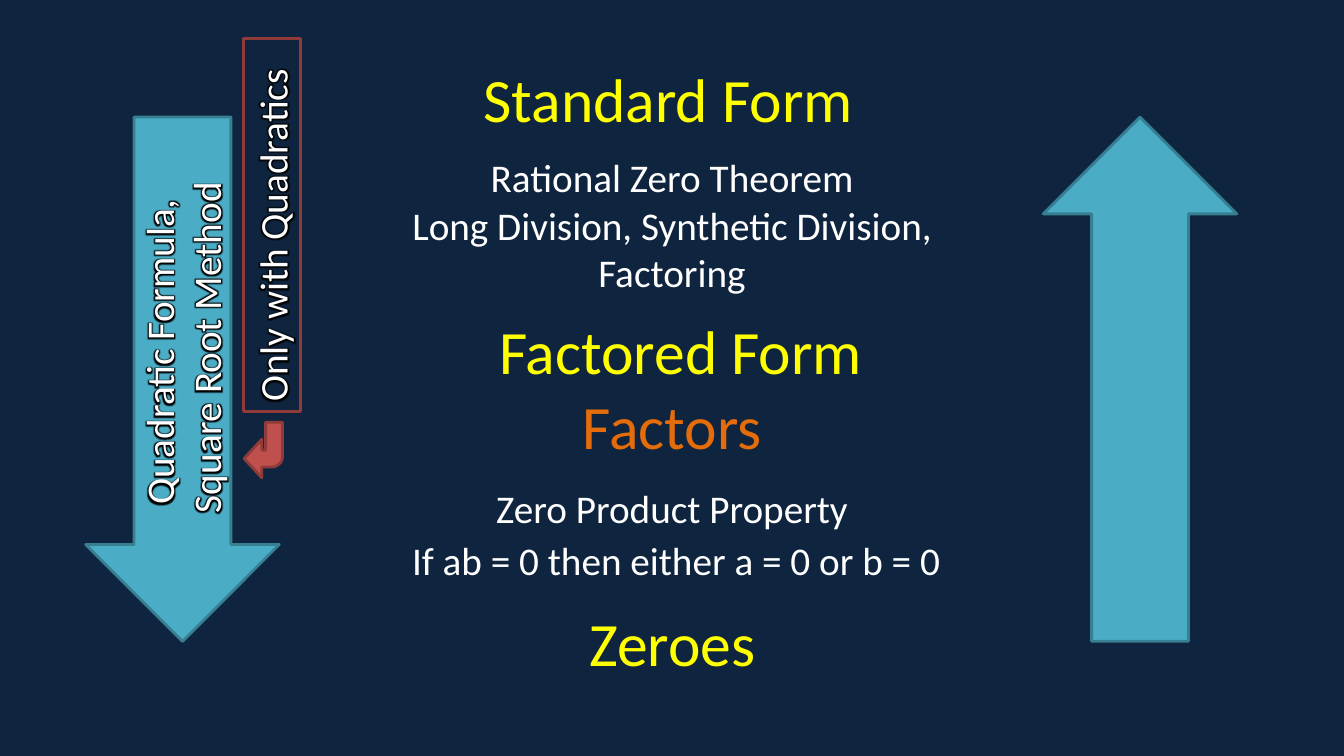
import dataclasses
import typing

import lxml.etree
import pptx
import pptx.dml.color
import pptx.enum.shapes
import pptx.enum.text
import pptx.oxml.ns
import pptx.util

Cm = pptx.util.Cm
Pt = pptx.util.Pt
Kind = pptx.enum.shapes.MSO_SHAPE
Align = pptx.enum.text.PP_ALIGN
Anchor = pptx.enum.text.MSO_ANCHOR

NAVY, WHITE, YELLOW, ORANGE = "0F243E", "FFFFFF", "FFFF00", "E46C0A"
TEAL, EDGE, RED, MAROON = "4BACC6", "377F92", "C0504D", "8E3B39"
TALL = 4.09


@dataclasses.dataclass
class Box:
    left: float
    top: float
    width: float
    height: float
    turn: float = 0


@dataclasses.dataclass
class Label:
    box: Box
    lines: list[str]
    size: int = 28
    color: str = WHITE
    title: bool = False


@dataclasses.dataclass
class Arrow:
    box: Box
    kind: typing.Any
    fill: str
    edge: str
    adjust: tuple[float, ...] = ()


LABELS = [
    Label(Box(6.05, 0.43, 21.59, TALL), ["Standard Form"], 44, YELLOW, True),
    Label(Box(7.42, 6.78, 19.48, TALL), ["Factored Form"], 44, YELLOW),
    Label(Box(6.15, 8.66, 21.59, TALL), ["Factors"], 44, ORANGE),
    Label(Box(6.15, 14.12, 21.59, TALL), ["Zeroes"], 44, YELLOW),
    Label(Box(8.36, 3.61, 17.15, TALL),
          ["Rational Zero Theorem", "Long Division, Synthetic Division, Factoring"]),
    Label(Box(8.36, 10.74, 17.15, TALL), ["Zero Product Property"]),
    Label(Box(8.46, 12.07, 17.15, TALL), ["If ab = 0 then either a = 0 or b = 0"]),
]
ARROWS = [
    Arrow(Box(2.16, 2.95, 4.88, 13.21), Kind.DOWN_ARROW, TEAL, EDGE),
    Arrow(Box(26.29, 2.95, 4.88, 13.21, 180), Kind.DOWN_ARROW, TEAL, EDGE),
    Arrow(Box(6.15, 10.64, 0.97, 1.4, 180), Kind.BENT_ARROW, RED, MAROON,
          (0.44, 0.5, 0.46, 0.28)),
]
METHOD = Label(Box(-1.22, 7.44, 11.63, 2.64, 270),
               ["Quadratic Formula, ", "Square Root Method"])
LIMIT = Label(Box(2.16, 4.95, 9.4, 1.45, 270), ["Only with Quadratics"])


def rgb(code: str) -> pptx.dml.color.RGBColor:
    return pptx.dml.color.RGBColor.from_string(code)


def place(shape: typing.Any, box: Box) -> None:
    shape.left, shape.top = Cm(box.left), Cm(box.top)
    shape.width, shape.height = Cm(box.width), Cm(box.height)
    shape.rotation = box.turn


def glow(run: typing.Any) -> None:
    """Put a soft black halo behind the letters."""
    tag = pptx.oxml.ns.qn
    list_ = lxml.etree.Element(tag("a:effectLst"))
    halo = lxml.etree.SubElement(list_, tag("a:glow"), rad="63500")
    lxml.etree.SubElement(halo, tag("a:srgbClr"), val="000000")
    run.font.fill._xPr.find(tag("a:solidFill")).addnext(list_)


def write(shape: typing.Any, label: Label, align: typing.Any = Align.CENTER,
          anchor: typing.Any = Anchor.MIDDLE, halo: bool = False) -> None:
    frame = shape.text_frame
    frame.word_wrap = True
    frame.auto_size = pptx.enum.text.MSO_AUTO_SIZE.NONE
    frame.vertical_anchor = anchor
    para = frame.paragraphs[0]
    para.alignment = align
    for i, line in enumerate(label.lines):
        if i:
            para.add_line_break()
        run = para.add_run()
        run.text = line
        run.font.name = "Calibri"
        run.font.size = Pt(label.size)
        run.font.color.rgb = rgb(label.color)
        if halo:
            glow(run)


def add_label(slide: typing.Any, label: Label, **style: typing.Any) -> None:
    shape = slide.shapes.title if label.title else slide.shapes.add_textbox(0, 0, 0, 0)
    place(shape, label.box)
    write(shape, label, **style)


def add_form(slide: typing.Any, kind: typing.Any, box: Box, edge: str,
             fill: str | None = None) -> typing.Any:
    shape = slide.shapes.add_shape(kind, 0, 0, 0, 0)
    place(shape, box)
    shape.shadow.inherit = False
    if fill:
        shape.fill.solid()
        shape.fill.fore_color.rgb = rgb(fill)
    else:
        shape.fill.background()
    shape.line.color.rgb = rgb(edge)
    shape.line.width = Pt(2)
    return shape


def main() -> None:
    deck = pptx.Presentation()
    deck.slide_width, deck.slide_height = Cm(33.87), Cm(19.05)
    slide = deck.slides.add_slide(deck.slide_layouts[5])
    slide.background.fill.solid()
    slide.background.fill.fore_color.rgb = rgb(NAVY)

    for arrow in ARROWS:
        shape = add_form(slide, arrow.kind, arrow.box, arrow.edge, arrow.fill)
        for i, value in enumerate(arrow.adjust):
            shape.adjustments[i] = value
    for label in LABELS:
        add_label(slide, label)
    add_label(slide, METHOD, anchor=Anchor.TOP, halo=True)
    frame = add_form(slide, Kind.RECTANGLE, LIMIT.box, MAROON)
    write(frame, LIMIT, Align.LEFT, Anchor.TOP, halo=True)
    deck.save("out.pptx")


if __name__ == "__main__":
    main()
